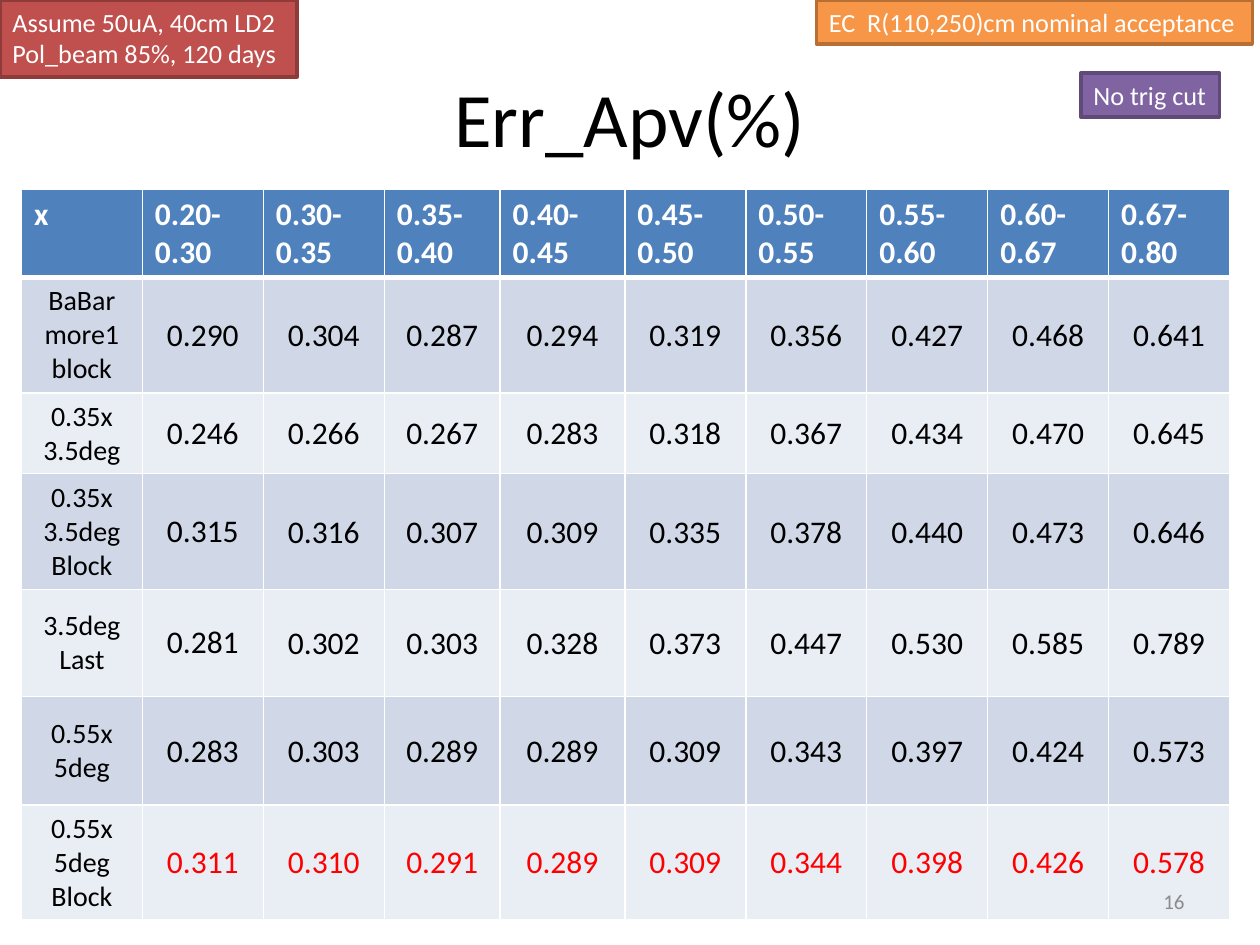
from lxml import etree
from pptx import Presentation
from pptx.dml.color import RGBColor
from pptx.enum.shapes import MSO_SHAPE
from pptx.enum.text import MSO_ANCHOR, MSO_AUTO_SIZE, PP_ALIGN
from pptx.oxml.ns import qn
from pptx.util import Inches, Pt

RECTANGLE = MSO_SHAPE.RECTANGLE
TOP, MIDDLE = MSO_ANCHOR.TOP, MSO_ANCHOR.MIDDLE
LEFT, CENTER, RIGHT = PP_ALIGN.LEFT, PP_ALIGN.CENTER, PP_ALIGN.RIGHT
FIT_SHAPE = MSO_AUTO_SIZE.SHAPE_TO_FIT_TEXT

FONT = "Calibri"
WHITE = RGBColor(0xFF, 0xFF, 0xFF)
BLACK = RGBColor(0x00, 0x00, 0x00)
RED = RGBColor(0xFF, 0x00, 0x00)
GRAY = RGBColor(0x8C, 0x8C, 0x8C)
HEADER_BLUE = RGBColor(0x4F, 0x81, 0xBD)
BAND_DARK = RGBColor(0xD0, 0xD8, 0xE8)
BAND_LIGHT = RGBColor(0xE9, 0xED, 0xF4)
ORANGE, ORANGE_EDGE = RGBColor(0xF7, 0x96, 0x46), RGBColor(0xB7, 0x6F, 0x34)
BRICK, BRICK_EDGE = RGBColor(0xC0, 0x50, 0x4D), RGBColor(0x8E, 0x3B, 0x39)
PURPLE, PURPLE_EDGE = RGBColor(0x80, 0x64, 0xA2), RGBColor(0x5F, 0x4A, 0x78)

X_RANGES = ["x", "0.20-0.30", "0.30-0.35", "0.35-0.40", "0.40-0.45",
            "0.45-0.50", "0.50-0.55", "0.55-0.60", "0.60-0.67", "0.67-0.80"]
# Row label, then one value for each x range
ERR_ROWS = [
    ("BaBar more1 block", "0.290 0.304 0.287 0.294 0.319 0.356 0.427 0.468 0.641"),
    ("0.35x\n3.5deg", "0.246 0.266 0.267 0.283 0.318 0.367 0.434 0.470 0.645"),
    ("0.35x\n3.5deg\nBlock", "0.315 0.316 0.307 0.309 0.335 0.378 0.440 0.473 0.646"),
    ("3.5deg\nLast", "0.281 0.302 0.303 0.328 0.373 0.447 0.530 0.585 0.789"),
    ("0.55x\n5deg", "0.283 0.303 0.289 0.289 0.309 0.343 0.397 0.424 0.573"),
    ("0.55x\n5deg\nBlock", "0.311 0.310 0.291 0.289 0.309 0.344 0.398 0.426 0.578"),
]
COLUMN_WIDTHS = [0.96] * 3 + [0.92, 0.99] + [0.96] * 5
ROW_HEIGHTS = [0.7, 0.92, 0.64, 0.92, 0.85, 0.86, 0.91]


def write_text(frame, text, size=18, color=BLACK, bold=False, align=LEFT):
    """Write one paragraph for each line of text."""
    for number, line in enumerate(text.split("\n")):
        paragraph = frame.add_paragraph() if number else frame.paragraphs[0]
        paragraph.alignment = align
        run = paragraph.add_run()
        run.text = line
        run.font.name = FONT
        run.font.size = Pt(size)
        run.font.bold = bold
        run.font.color.rgb = color


def add_label(slide, text, left, top, width, height, **text_format):
    label = slide.shapes.add_textbox(Inches(left), Inches(top), Inches(width), Inches(height))
    label.text_frame.word_wrap = True
    label.text_frame.vertical_anchor = MIDDLE
    write_text(label.text_frame, text, **text_format)


def add_note(slide, text, left, top, width, height, fill, edge):
    note = slide.shapes.add_shape(RECTANGLE, Inches(left), Inches(top),
                                  Inches(width), Inches(height))
    note.shadow.inherit = False
    note.fill.solid()
    note.fill.fore_color.rgb = fill
    note.line.color.rgb = edge
    note.line.width = Pt(2)
    frame = note.text_frame
    frame.word_wrap = False
    frame.auto_size = FIT_SHAPE
    frame.vertical_anchor = TOP
    write_text(frame, text, size=15, color=WHITE)


def set_borders(cell, top=1, bottom=1):
    """Draw white borders, widths in points; they must precede the fill."""
    properties = cell._tc.get_or_add_tcPr()
    widths = {"a:lnL": 1, "a:lnR": 1, "a:lnT": top, "a:lnB": bottom}
    for position, (side, width) in enumerate(widths.items()):
        border = etree.Element(qn(side), w=str(Pt(width)))
        fill = etree.SubElement(border, qn("a:solidFill"))
        etree.SubElement(fill, qn("a:srgbClr"), val=str(WHITE))
        properties.insert(position, border)


def fill_cell(cell, text, fill, anchor=MIDDLE, top=1, bottom=1, **text_format):
    cell.fill.solid()
    cell.fill.fore_color.rgb = fill
    cell.vertical_anchor = anchor
    set_borders(cell, top, bottom)
    write_text(cell.text_frame, text, **text_format)


def add_err_table(slide):
    table = slide.shapes.add_table(len(ROW_HEIGHTS), len(COLUMN_WIDTHS),
                                   Inches(0.17), Inches(1.5), Inches(sum(COLUMN_WIDTHS)),
                                   Inches(sum(ROW_HEIGHTS))).table
    table.horz_banding = False
    for column, width in zip(table.columns, COLUMN_WIDTHS):
        column.width = Inches(width)
    for row, height in zip(table.rows, ROW_HEIGHTS):
        row.height = Inches(height)

    # Header row
    for column, x_range in enumerate(X_RANGES):
        fill_cell(table.cell(0, column), x_range, HEADER_BLUE, anchor=TOP, bottom=3,
                  color=WHITE, bold=True)

    # Banded body, last row of values in red
    for row, (row_label, values) in enumerate(ERR_ROWS, start=1):
        band = BAND_DARK if row % 2 else BAND_LIGHT
        top = 3 if row == 1 else 1
        value_color = RED if row == len(ERR_ROWS) else BLACK
        fill_cell(table.cell(row, 0), row_label, band, top=top, size=16, align=CENTER)
        for column, value in enumerate(values.split(), start=1):
            cell = table.cell(row, column)
            fill_cell(cell, value, band, top=top, color=value_color, align=CENTER)
            if column > 1 or row > 4:
                cell.margin_left = cell.margin_right = cell.margin_top = Inches(0.01)
                cell.margin_bottom = 0


def main():
    presentation = Presentation()
    presentation.slide_width = Inches(10)
    presentation.slide_height = Inches(7.5)
    slide = presentation.slides.add_slide(presentation.slide_layouts[6])

    # Title, table and page number
    add_label(slide, "Err_Apv(%)", 0.5, 0.3, 9, 1.25, size=44, align=CENTER)
    add_err_table(slide)
    add_label(slide, "16", 7.17, 6.95, 2.33, 0.4, size=12, color=GRAY, align=RIGHT)

    # Coloured notes along the top
    add_note(slide, "EC  R(110,250)cm nominal acceptance", 6.48, 0, 3.46, 0.35,
             ORANGE, ORANGE_EDGE)
    add_note(slide, "Assume 50uA, 40cm LD2\nPol_beam 85%, 120 days", 0, 0, 2.36, 0.61,
             BRICK, BRICK_EDGE)
    add_note(slide, "No trig cut", 8.58, 0.58, 1.1, 0.35, PURPLE, PURPLE_EDGE)

    presentation.save("out.pptx")


if __name__ == "__main__":
    main()
